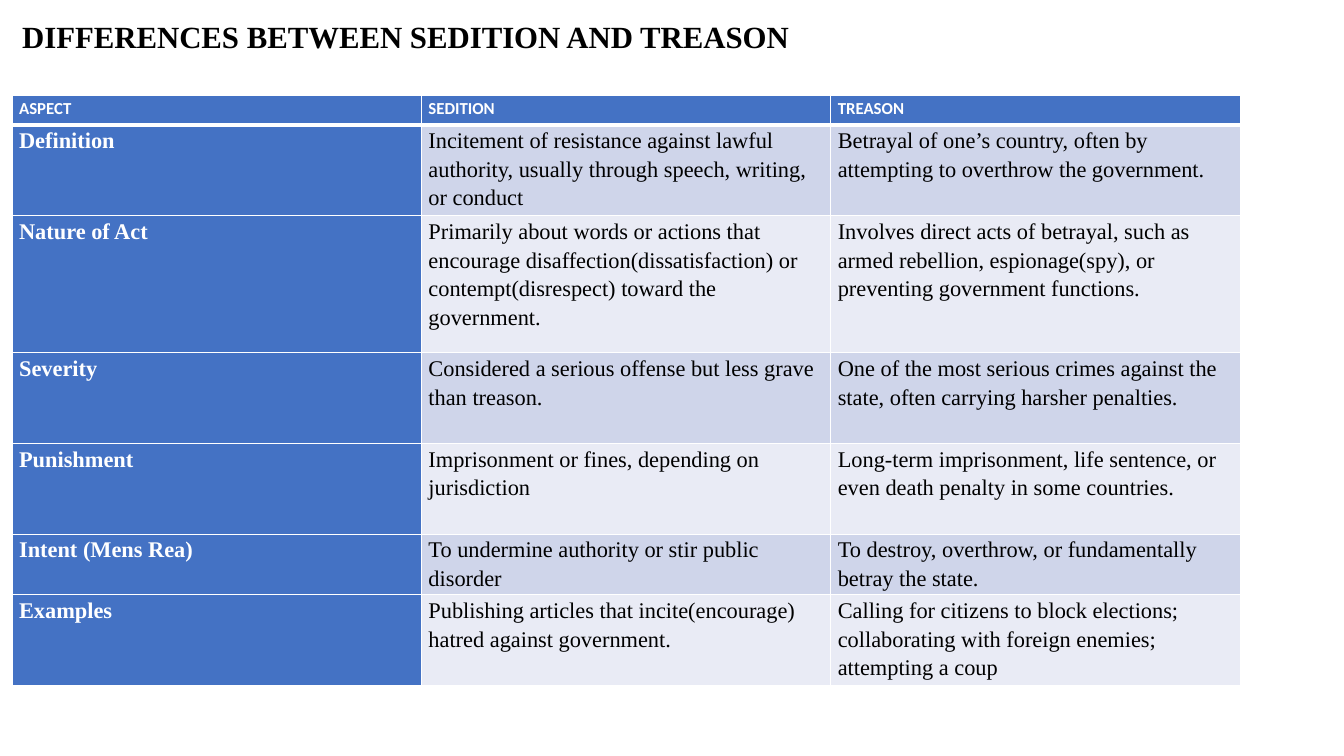
from lxml.etree import SubElement
from pptx import Presentation
from pptx.dml.color import RGBColor
from pptx.enum.text import MSO_ANCHOR, PP_ALIGN
from pptx.oxml.ns import qn
from pptx.util import Inches, Pt

SERIF = "Times New Roman"
BLUE, WHITE, BLACK = "4472C4", "FFFFFF", "000000"
BANDS = ("CFD5EA", "E9EBF5")
ROW_HEIGHTS = (0.29, 0.9, 1.36, 0.9, 0.9, 0.6, 0.9)
ROWS = (
    ("ASPECT", "SEDITION", "TREASON"),
    ("Definition",
     "Incitement of resistance against lawful authority, usually through speech, writing, or conduct",
     "Betrayal of one’s country, often by attempting to overthrow the government."),
    ("Nature of Act",
     "Primarily about words or actions that encourage disaffection(dissatisfaction) or "
     "contempt(disrespect) toward the government.",
     "Involves direct acts of betrayal, such as armed rebellion, espionage(spy), or "
     "preventing government functions."),
    ("Severity",
     "Considered a serious offense but less grave than treason.",
     "One of the most serious crimes against the state, often carrying harsher penalties."),
    ("Punishment",
     "Imprisonment or fines, depending on jurisdiction",
     "Long-term imprisonment, life sentence, or even death penalty in some countries."),
    ("Intent (Mens Rea)",
     "To undermine authority or stir public disorder",
     "To destroy, overthrow, or fundamentally betray the state."),
    ("Examples",
     "Publishing articles that incite(encourage) hatred against government.",
     "Calling for citizens to block elections; collaborating with foreign enemies; attempting a coup"),
)


def rgb(value):
    """Return the colour for a hex string."""
    return RGBColor.from_string(value)


def write(tf, text, size=16, font=SERIF, color=BLACK, bold=False, spacing=1.15, after=8):
    """Fill a text frame with one formatted paragraph."""
    p = tf.paragraphs[0]
    p.alignment = PP_ALIGN.LEFT
    p.line_spacing = spacing
    p.space_before, p.space_after = Pt(0), Pt(after)
    r = p.add_run()
    r.text = text
    r.font.size, r.font.name, r.font.bold = Pt(size), font, bold
    r.font.color.rgb = rgb(color)


def set_borders(cell, top, bottom):
    """Draw white borders around a cell, with widths in points."""
    tc_pr = cell._tc.get_or_add_tcPr()
    for side, width in (("L", 1), ("R", 1), ("T", top), ("B", bottom)):
        ln = SubElement(tc_pr, qn(f"a:ln{side}"), w=str(Pt(width)))
        SubElement(SubElement(ln, qn("a:solidFill")), qn("a:srgbClr"), val=WHITE)


def add_title(s, text, left, top, width, height):
    """Place the slide heading in the title placeholder."""
    sp = s.shapes.title
    sp.left, sp.top = Inches(left), Inches(top)
    sp.width, sp.height = Inches(width), Inches(height)
    tf = sp.text_frame
    tf.word_wrap = True
    tf.vertical_anchor = MSO_ANCHOR.TOP
    tf.margin_top = Inches(0.2)
    write(tf, text, size=22, bold=True, spacing=0.9, after=0)


def add_comparison(s, rows, heights, left, top, width):
    """Build the comparison table with equal columns."""
    cols = len(rows[0])
    table = s.shapes.add_table(len(rows), cols, Inches(left), Inches(top),
                               Inches(width), Inches(sum(heights))).table
    for col in table.columns:
        col.width = Inches(width / cols)
    for i, (texts, height) in enumerate(zip(rows, heights)):
        table.rows[i].height = Inches(height)
        for j, text in enumerate(texts):
            cell = table.cell(i, j)
            header = i == 0
            label = header or j == 0
            cell.margin_left = cell.margin_right = Inches(0.07)
            cell.margin_top = cell.margin_bottom = 0
            set_borders(cell, 3 if i == 1 else 1, 3 if header else 1)
            cell.fill.solid()
            cell.fill.fore_color.rgb = rgb(BLUE if label else BANDS[(i - 1) % 2])
            write(cell.text_frame, text, size=12 if header else 16,
                  font="Calibri" if header else SERIF,
                  color=WHITE if label else BLACK, bold=label)


def main():
    """Create the presentation."""
    prs = Presentation()
    prs.slide_width, prs.slide_height = Inches(13.33), Inches(7.5)
    s = prs.slides.add_slide(prs.slide_layouts[5])
    add_title(s, "DIFFERENCES BETWEEN SEDITION AND TREASON", 0.12, 0.02, 11.5, 1.45)
    add_comparison(s, ROWS, ROW_HEIGHTS, 0.12, 0.95, 12.18)
    prs.save("out.pptx")


if __name__ == "__main__":
    main()
